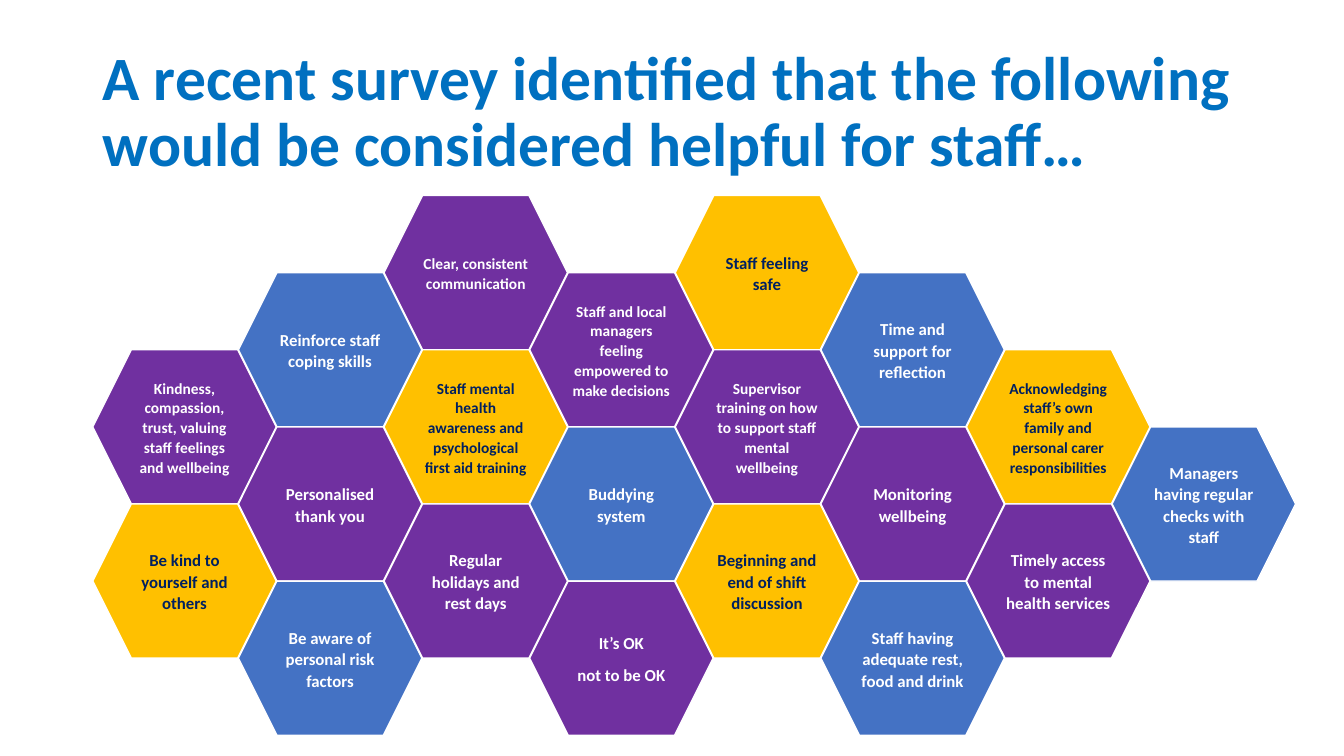
"""Build a slide with a honeycomb of measures that staff would find helpful."""
from pptx import Presentation
from pptx.dml.color import RGBColor
from pptx.enum.shapes import MSO_SHAPE as Shape
from pptx.enum.text import MSO_ANCHOR as Anchor, PP_ALIGN as Align
from pptx.util import Inches, Pt

PURPLE, BLUE, GOLD = "7030A0", "4472C4", "FFC000"
WHITE, NAVY, TITLE_BLUE = "FFFFFF", "002060", "0070C0"

CELLS = [
    (0, 2, PURPLE, 11, "Kindness, compassion, trust, valuing staff feelings and wellbeing"),
    (0, 4, GOLD, 12, "Be kind to yourself and others"),
    (1, 1, BLUE, 12, "Reinforce staff coping skills"),
    (1, 3, PURPLE, 12, "Personalised thank you"),
    (1, 5, BLUE, 12, "Be aware of personal risk factors"),
    (2, 0, PURPLE, 11, "Clear, consistent communication"),
    (2, 2, GOLD, 11, "Staff mental health awareness and psychological first aid training"),
    (2, 4, PURPLE, 12, "Regular holidays and rest days"),
    (3, 1, PURPLE, 11, "Staff and local managers feeling empowered to make decisions"),
    (3, 3, BLUE, 12, "Buddying system"),
    (3, 5, PURPLE, 12, "It’s OK\nnot to be OK"),
    (4, 0, GOLD, 12, "Staff feeling safe"),
    (4, 2, PURPLE, 11, "Supervisor training on how to support staff mental wellbeing"),
    (4, 4, GOLD, 12, "Beginning and end of shift discussion"),
    (5, 1, BLUE, 12, "Time and support for reflection"),
    (5, 3, PURPLE, 12, "Monitoring wellbeing"),
    (5, 5, BLUE, 12, "Staff having adequate rest, food and drink"),
    (6, 2, GOLD, 11, "Acknowledging staff’s own family and personal carer responsibilities"),
    (6, 4, PURPLE, 12, "Timely access to mental health services"),
    (7, 3, BLUE, 12, "Managers having regular checks with staff"),
]


def color(value):
    return RGBColor.from_string(value)


class HoneycombSlide:
    font = "Calibri"
    left, top = 0.92, 1.94
    width, height = 1.82, 1.53
    last_left, last_column = 11.03, 7

    def __init__(self, presentation):
        self.slide = presentation.slides.add_slide(presentation.slide_layouts[6])

    def set_text(self, shape, text, size, ink, align, spacing, after=0):
        frame = shape.text_frame
        frame.text = text
        frame.word_wrap = True
        frame.vertical_anchor = Anchor.MIDDLE
        for paragraph in frame.paragraphs:
            paragraph.alignment = align
            paragraph.line_spacing = spacing
            paragraph.space_after = Pt(after)
            for run in paragraph.runs:
                run.font.name = self.font
                run.font.size = Pt(size)
                run.font.bold = True
                run.font.color.rgb = color(ink)

    def title(self, text):
        box = self.slide.shapes.add_textbox(
            Inches(0.92), Inches(0.4), Inches(11.5), Inches(1.45))
        self.set_text(box, text, 44, TITLE_BLUE, Align.LEFT, 0.9)

    def hexagon(self, column, half_row, fill, size, text):
        column_step = (self.last_left - self.left) / self.last_column
        shape = self.slide.shapes.add_shape(
            Shape.HEXAGON,
            Inches(self.left + column * column_step),
            Inches(self.top + half_row * self.height / 2),
            Inches(self.width), Inches(self.height))
        shape.shadow.inherit = False
        shape.fill.solid()
        shape.fill.fore_color.rgb = color(fill)
        shape.line.color.rgb = color(WHITE)
        shape.line.width = Pt(1)
        ink = NAVY if fill == GOLD else WHITE
        self.set_text(shape, text, size, ink, Align.CENTER, 1.07, after=8)


def main():
    presentation = Presentation()
    presentation.slide_width = Inches(13.33)
    presentation.slide_height = Inches(7.5)
    honeycomb = HoneycombSlide(presentation)
    honeycomb.title("A recent survey identified that the following "
                    "would be considered helpful for staff…")
    for cell in CELLS:
        honeycomb.hexagon(*cell)
    presentation.save("out.pptx")


if __name__ == "__main__":
    main()
